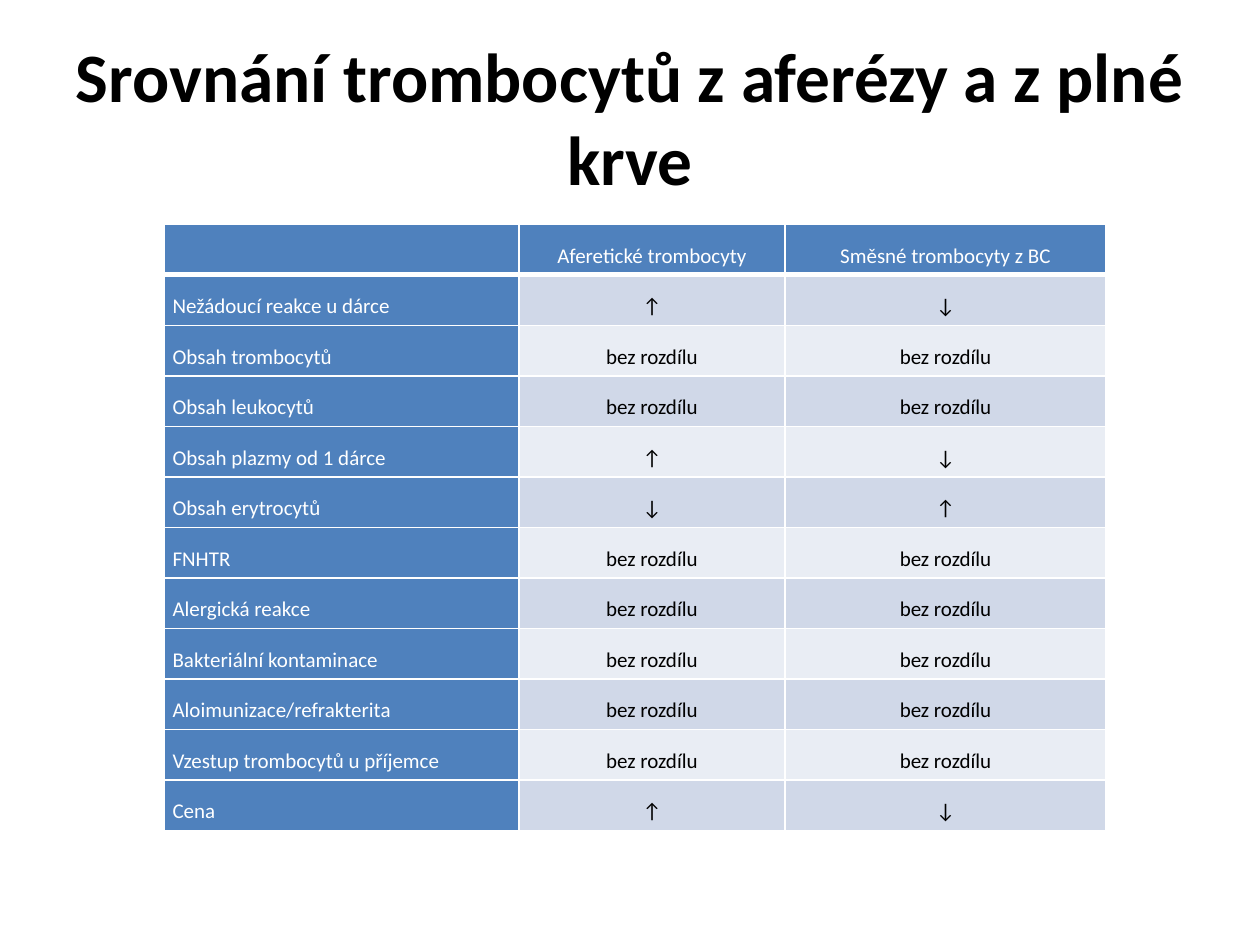
from dataclasses import dataclass
from typing import NamedTuple

from lxml.etree import SubElement
from pptx import Presentation
from pptx.dml.color import RGBColor
from pptx.enum.text import MSO_ANCHOR, MSO_AUTO_SIZE, PP_ALIGN
from pptx.oxml.ns import qn
from pptx.util import Inches, Pt


@dataclass(frozen=True)
class Theme:
    font: str = "Calibri"
    title_size: float = 39.6
    cell_size: float = 12
    dark: str = "000000"
    light: str = "FFFFFF"
    accent: str = "4F81BD"
    bands: tuple[str, str] = ("D0D8E8", "E9EDF4")
    line: float = 1
    header_line: float = 3


class Box(NamedTuple):
    left: float
    top: float
    width: float
    height: float


class Row(NamedTuple):
    label: str
    apheresis: str
    pooled: str


THEME = Theme()
SLIDE_W, SLIDE_H = 10, 7.5
TITLE_BOX = Box(0.05, 0.04, 0.9, 1.25 / SLIDE_H)
TABLE_BOX = Box(0.13, 1.78 / SLIDE_H, 0.748, 4.81 / SLIDE_H)
COLUMN_WIDTHS = (2.82, 2.11, 2.55)
UP, DOWN, SAME = "↑", "↓", "bez rozdílu"
TITLE = "Srovnání trombocytů z aferézy a z plné krve"
ROWS = (
    Row("", "Aferetické trombocyty", "Směsné trombocyty z BC"),
    Row("Nežádoucí reakce u dárce", UP, DOWN),
    Row("Obsah trombocytů", SAME, SAME),
    Row("Obsah leukocytů", SAME, SAME),
    Row("Obsah plazmy od 1 dárce", UP, DOWN),
    Row("Obsah erytrocytů", DOWN, UP),
    Row("FNHTR", SAME, SAME),
    Row("Alergická reakce", SAME, SAME),
    Row("Bakteriální kontaminace", SAME, SAME),
    Row("Aloimunizace/refrakterita", SAME, SAME),
    Row("Vzestup trombocytů u příjemce", SAME, SAME),
    Row("Cena", UP, DOWN),
)


def apply(target, values: dict) -> None:
    for name, value in values.items():
        setattr(target, name, value)


def place(box: Box) -> dict:
    return {
        "left": Inches(box.left * SLIDE_W),
        "top": Inches(box.top * SLIDE_H),
        "width": Inches(box.width * SLIDE_W),
        "height": Inches(box.height * SLIDE_H),
    }


def write(tf, text: str, size: float, color: str, bold: bool, align, spacing: float) -> None:
    p = tf.paragraphs[0]
    apply(p, {"alignment": align, "line_spacing": spacing})
    font = p.font
    if text:
        r = p.add_run()
        r.text = text
        font = r.font
    apply(font, {"name": THEME.font, "size": Pt(size), "bold": bold})
    font.color.rgb = RGBColor.from_string(color)


def draw_borders(cell, bottom: float) -> None:
    tc_pr = cell._tc.get_or_add_tcPr()
    widths = {"lnL": THEME.line, "lnR": THEME.line, "lnT": THEME.line, "lnB": bottom}
    for tag, width in widths.items():
        ln = SubElement(tc_pr, qn(f"a:{tag}"), w=str(Pt(width)))
        fill = SubElement(ln, qn("a:solidFill"))
        SubElement(fill, qn("a:srgbClr"), val=THEME.light)


def draw_cell(cell, text: str, row: int, col: int) -> None:
    heading = row == 0 or col == 0
    draw_borders(cell, THEME.header_line if row == 0 else THEME.line)
    cell.fill.solid()
    fill = THEME.accent if heading else THEME.bands[(row - 1) % 2]
    cell.fill.fore_color.rgb = RGBColor.from_string(fill)
    apply(cell, {
        "vertical_anchor": MSO_ANCHOR.MIDDLE,
        "margin_left": Inches(0.07), "margin_right": Inches(0.07),
        "margin_top": 0, "margin_bottom": 0,
    })
    write(cell.text_frame, text, THEME.cell_size,
          THEME.light if heading else THEME.dark, False,
          PP_ALIGN.LEFT if col == 0 else PP_ALIGN.CENTER, 1.5)


def draw_title(s) -> None:
    sp = s.shapes.title
    apply(sp, place(TITLE_BOX))
    tf = sp.text_frame
    apply(tf, {"word_wrap": True, "auto_size": MSO_AUTO_SIZE.NONE,
               "vertical_anchor": MSO_ANCHOR.MIDDLE})
    write(tf, TITLE, THEME.title_size, THEME.dark, True, PP_ALIGN.CENTER, 1.0)


def draw_table(s) -> None:
    frame = s.shapes.add_table(len(ROWS), len(COLUMN_WIDTHS), **place(TABLE_BOX))
    table = frame.table
    table.first_col = True
    for column, width in zip(table.columns, COLUMN_WIDTHS):
        column.width = Inches(width)
    for i, row in enumerate(ROWS):
        for j, text in enumerate(row):
            draw_cell(table.cell(i, j), text, i, j)


def main() -> None:
    prs = Presentation()
    apply(prs, {"slide_width": Inches(SLIDE_W), "slide_height": Inches(SLIDE_H)})
    s = prs.slides.add_slide(prs.slide_layouts.get_by_name("Title Only"))
    draw_title(s)
    draw_table(s)
    prs.save("out.pptx")


if __name__ == "__main__":
    main()
